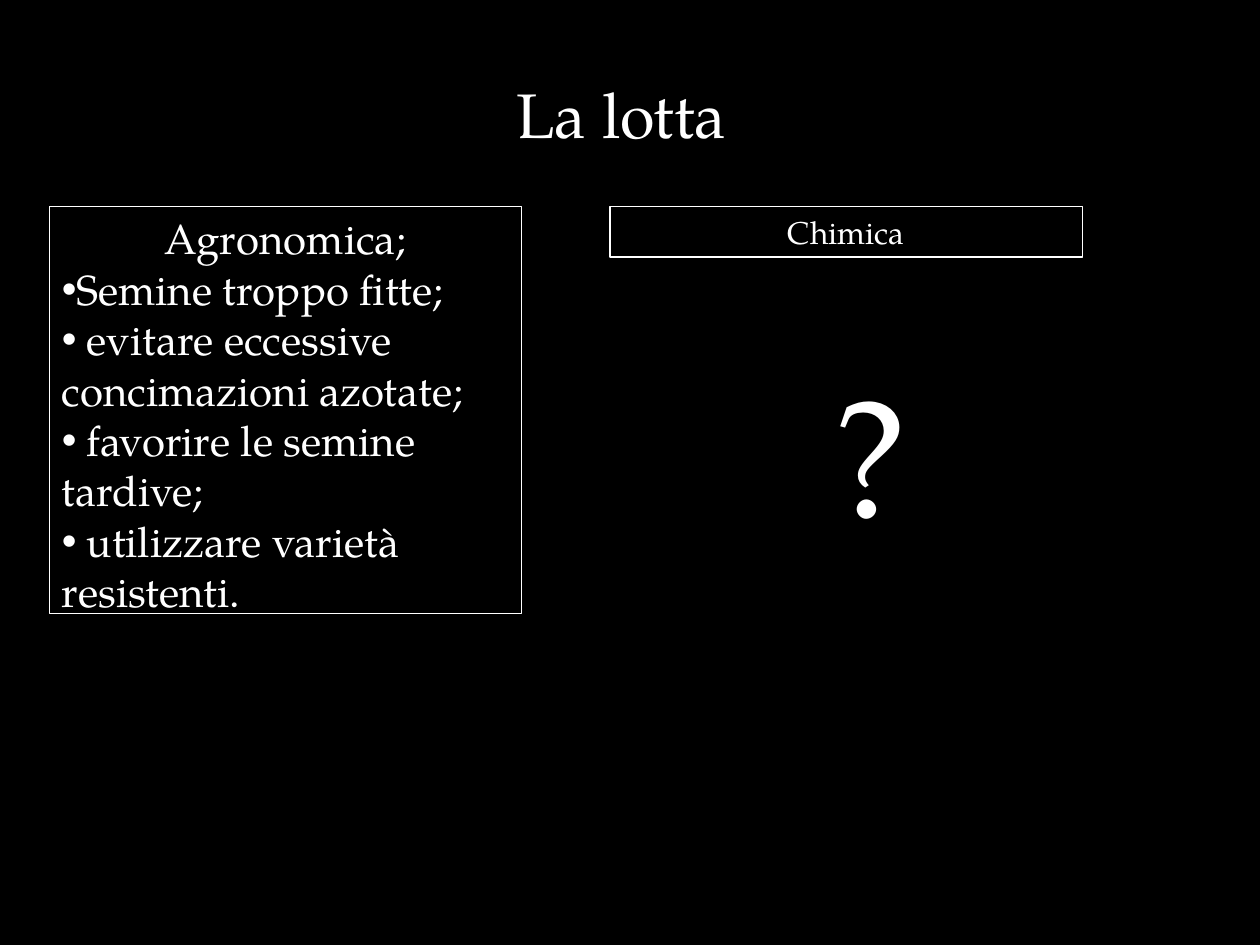
from dataclasses import dataclass

from lxml.etree import SubElement
from pptx import Presentation
from pptx.dml.color import RGBColor
from pptx.enum.shapes import MSO_SHAPE
from pptx.enum.text import MSO_ANCHOR, MSO_AUTO_SIZE, PP_ALIGN
from pptx.oxml.ns import qn
from pptx.util import Inches, Pt


@dataclass(frozen=True)
class Theme:
    """Colours, font and type sizes of the slide."""
    font: str = "TeX Gyre Pagella"
    back: RGBColor = RGBColor(0, 0, 0)
    ink: RGBColor = RGBColor(255, 255, 255)
    title: int = 36
    body: int = 24
    label: int = 18
    symbol: int = 96
    line: float = 0.75


def write(p, text, theme, size, align=PP_ALIGN.LEFT, bullet=None):
    """Fill a paragraph with formatted text and an optional bullet."""
    p.alignment = align
    p.space_before = p.space_after = Pt(0)
    pPr = p._p.get_or_add_pPr()
    pPr.set("marL", "0")
    pPr.set("indent", "0")
    if bullet:
        SubElement(pPr, qn("a:buChar")).set("char", bullet)
    else:
        SubElement(pPr, qn("a:buNone"))
    r = p.add_run()
    r.text = text
    r.font.name = theme.font
    r.font.size = Pt(size)
    r.font.color.rgb = theme.ink


class Builder:
    """Holds the theme and the current slide."""

    def __init__(self, slide, theme):
        """Keep the slide and paint its background."""
        self.s, self.theme = slide, theme
        fill = slide.background.fill
        fill.solid()
        fill.fore_color.rgb = theme.back

    def place(self, sp, box):
        """Position a shape and return its text frame, set to grow with text."""
        sp.left, sp.top, sp.width, sp.height = map(Inches, box)
        tf = sp.text_frame
        tf.word_wrap = True
        tf.auto_size = MSO_AUTO_SIZE.SHAPE_TO_FIT_TEXT
        tf.vertical_anchor = MSO_ANCHOR.TOP
        return tf

    def outline(self, sp):
        """Give a shape a thin line and no fill."""
        sp.fill.background()
        sp.line.color.rgb = self.theme.ink
        sp.line.width = Pt(self.theme.line)

    def title(self, text, box):
        """Fill the title placeholder."""
        tf = self.place(self.s.shapes.title, box)
        write(tf.paragraphs[0], text, self.theme, self.theme.title, PP_ALIGN.CENTER)

    def framed_list(self, heading, items, box):
        """Fill the body placeholder with a heading and bulleted items."""
        sp = self.s.placeholders[1]
        tf = self.place(sp, box)
        self.outline(sp)
        write(tf.paragraphs[0], heading, self.theme, self.theme.body, PP_ALIGN.CENTER)
        for item in items:
            write(tf.add_paragraph(), item, self.theme, self.theme.body, bullet="•")

    def framed_label(self, text, box):
        """Add an outlined rectangle with centred text."""
        sp = self.s.shapes.add_shape(MSO_SHAPE.RECTANGLE, *map(Inches, box))
        sp.shadow.inherit = False
        self.outline(sp)
        tf = self.place(sp, box)
        write(tf.paragraphs[0], text, self.theme, self.theme.label, PP_ALIGN.CENTER)

    def symbol(self, text, box):
        """Add a large centred character."""
        sp = self.s.shapes.add_textbox(*map(Inches, box))
        tf = self.place(sp, box)
        write(tf.paragraphs[0], text, self.theme, self.theme.symbol, PP_ALIGN.CENTER)


def main():
    """Build and save the slide."""
    prs = Presentation()
    prs.slide_width, prs.slide_height = Inches(10), Inches(7.5)
    b = Builder(prs.slides.add_slide(prs.slide_layouts[1]), Theme())
    top, width = 1.64, 3.75
    b.title("La lotta ", (2.73, 0.55, 4.53, 0.71))
    b.framed_list("Agronomica;", [
        "Semine troppo fitte;",
        " evitare eccessive concimazioni azotate;",
        " favorire le semine tardive;",
        " utilizzare varietà resistenti.",
    ], (0.39, top, width, 3.33))
    b.framed_label("Chimica", (4.84, top, width, 0.4))
    b.symbol("?", (5.7, 2.73, 2.42, 1.72))
    prs.save("out.pptx")


if __name__ == "__main__":
    main()
